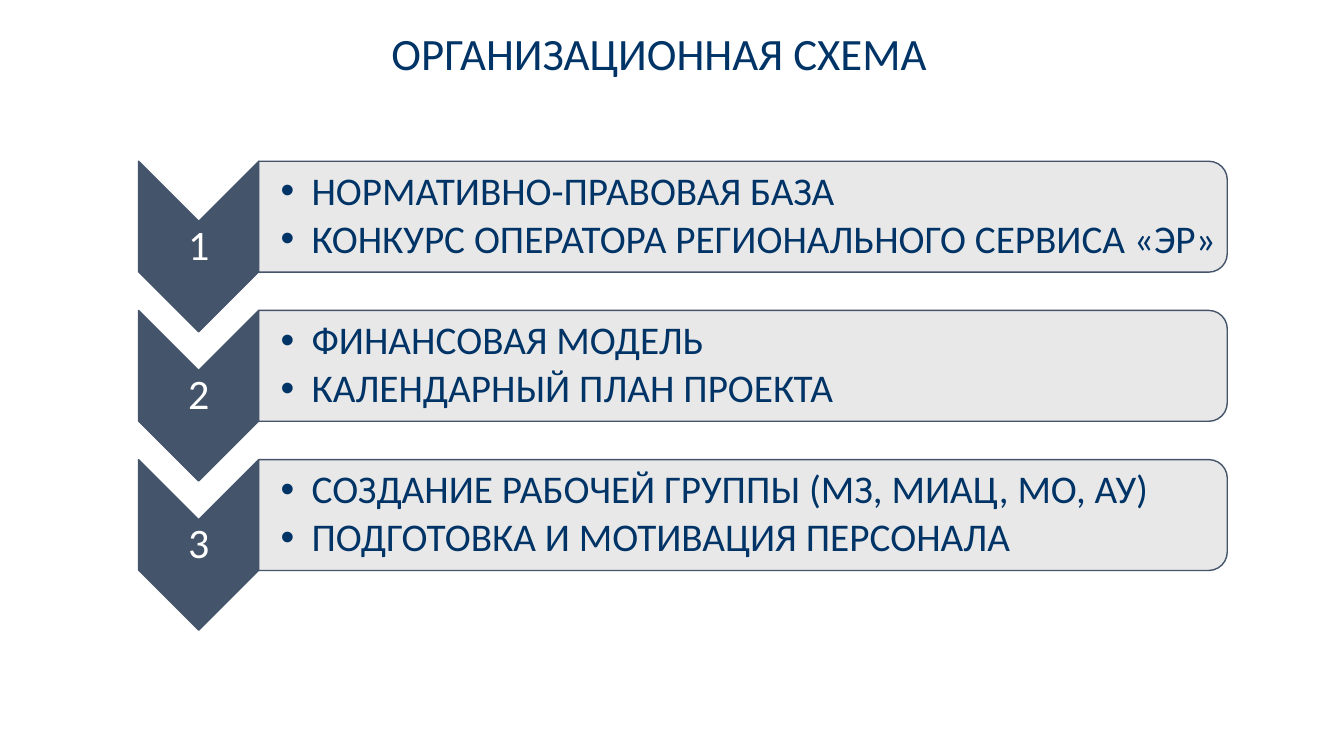
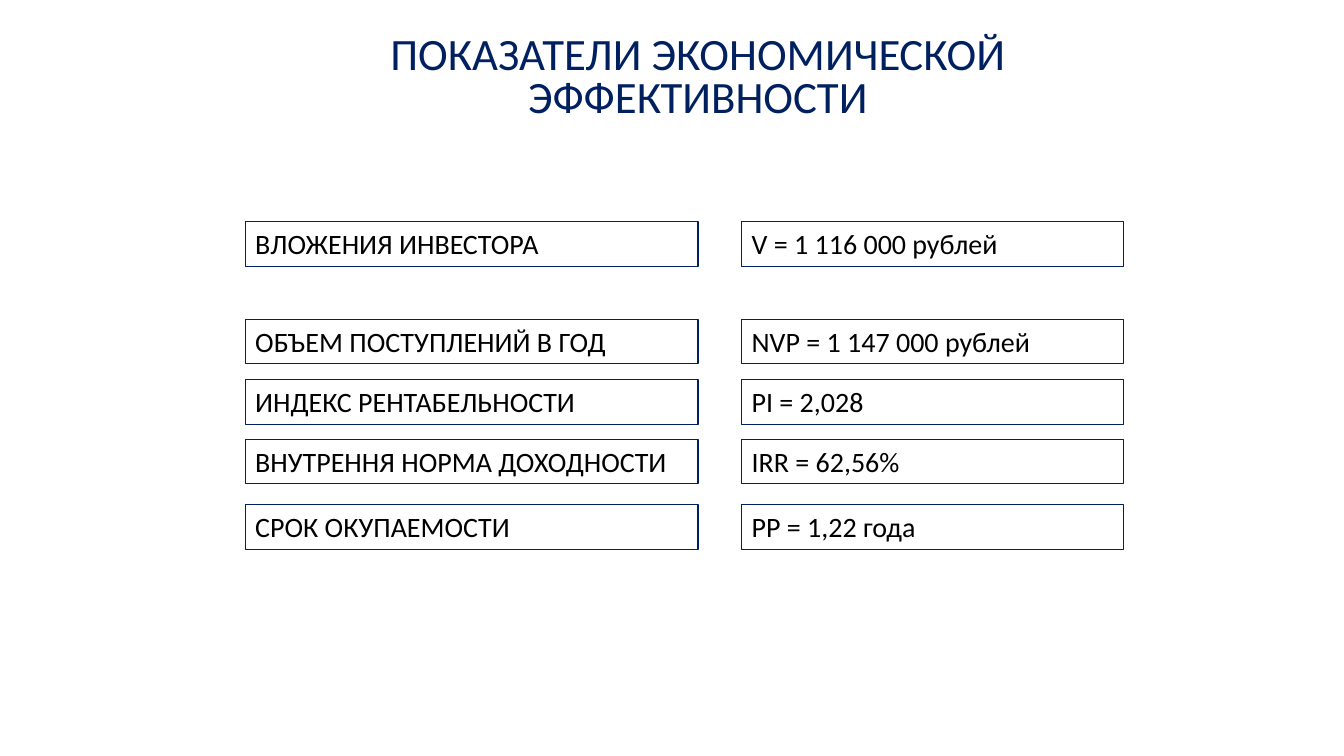
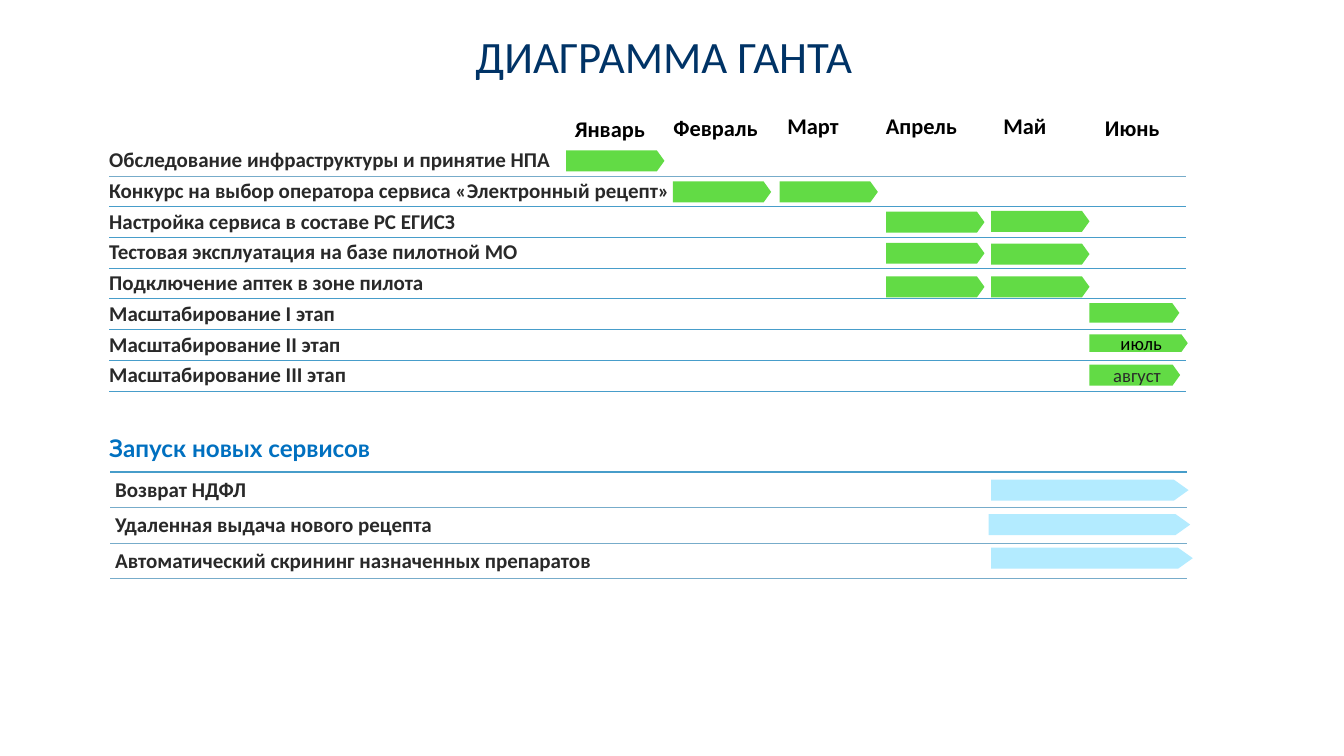
import lxml.etree
import pptx
import pptx.dml.color
import pptx.enum.shapes
import pptx.enum.text
import pptx.oxml.ns
import pptx.util

SHAPE = pptx.enum.shapes.MSO_SHAPE
ALIGN = pptx.enum.text.PP_ALIGN
ANCHOR = pptx.enum.text.MSO_ANCHOR
CELL = pptx.util.Inches(1 / 12)
COLUMNS, ROWS = 160, 90
NAVY, DEEP, SLATE, GREY = "003366", "002060", "44546A", "E7E6E6"
BLUE, AZURE, STEEL, GREEN, ICE = "0070C0", "479DCA", "77ACCA", "62DB45", "B3EBFF"
BLACK, INK, WHITE = "000000", "292929", "FFFFFF"


def units(value):
    return round(value * CELL)


def color(value):
    return pptx.dml.color.RGBColor.from_string(value)


def apply(target, values):
    for name, value in values.items():
        setattr(target, name, value)


def add_xml(parent, tag, **attributes):
    return lxml.etree.SubElement(parent, pptx.oxml.ns.qn(tag), attributes)


class Slides:
    def __init__(self):
        self.deck = pptx.Presentation()
        apply(self.deck, {"slide_width": units(COLUMNS), "slide_height": units(ROWS)})
        self.page = None

    def start(self, title, place, hue=NAVY, align=ALIGN.CENTER, inset=0.6):
        self.page = self.deck.slides.add_slide(self.deck.slide_layouts[6])
        self.text(place, [title], 32, hue, align=align, inset=inset, spacing=0.8)

    def fill_text(self, frame, lines, size, hue, font="Calibri", bold=False, align=ALIGN.LEFT,
                  spacing=1.0, after=0, bullet=False):
        for index, line in enumerate(lines):
            para = frame.add_paragraph() if index else frame.paragraphs[0]
            if bullet:
                props = para._p.get_or_add_pPr()
                props.set("marL", str(units(3.7)))
                props.set("indent", str(-units(3.7)))
                add_xml(props, "a:buFont", typeface="Arial")
                add_xml(props, "a:buChar", char="•")
            apply(para, {"alignment": align, "line_spacing": spacing,
                         "space_after": pptx.util.Pt(after)})
            span = para.add_run()
            span.text = line
            apply(span.font, {"name": font, "size": pptx.util.Pt(size), "bold": bold})
            span.font.color.rgb = color(hue)

    def pad(self, target, inset, left=None):
        margins = dict.fromkeys(("margin_right", "margin_top", "margin_bottom"), units(inset))
        apply(target, {**margins, "margin_left": units(inset if left is None else left)})

    def text(self, place, lines, size, hue, anchor=ANCHOR.TOP, inset=0, left=None, **style):
        box = self.page.shapes.add_textbox(*map(units, place))
        apply(box.text_frame, {"word_wrap": True, "vertical_anchor": anchor})
        self.pad(box.text_frame, inset, left)
        self.fill_text(box.text_frame, lines, size, hue, **style)

    def shape(self, kind, place, fill=None, line=None, width=1, adjust=None):
        shape = self.page.shapes.add_shape(kind, *map(units, place))
        shape.shadow.inherit = False
        if fill:
            shape.fill.solid()
            shape.fill.fore_color.rgb = color(fill)
        else:
            shape.fill.background()
        if line:
            shape.line.color.rgb = color(line)
            shape.line.width = pptx.util.Pt(width)
        else:
            shape.line.fill.background()
        if adjust is not None:
            shape.adjustments[0] = adjust
        return shape

    def turned(self, kind, place, fill, opacity=100):
        left, top, width, height = place
        shift = (width - height) / 2
        shape = self.shape(kind, (left + shift, top - shift, height, width), fill, SLATE)
        shape.rotation = 90
        if opacity < 100:
            hue = shape._element.spPr.find(".//" + pptx.oxml.ns.qn("a:srgbClr"))
            add_xml(hue, "a:alpha", val=str(opacity * 1000))

    def field(self, place, label):
        shape = self.shape(SHAPE.RECTANGLE, place, line=DEEP, width=0.75)
        apply(shape.text_frame, {"word_wrap": True, "vertical_anchor": ANCHOR.TOP})
        self.pad(shape.text_frame, 0.6, 1.2)
        self.fill_text(shape.text_frame, [label], 20, BLACK)

    def bar(self, place, fill, tip, label=None, hue=BLACK):
        shape = self.shape(SHAPE.PENTAGON, place, fill, adjust=tip)
        if label:
            apply(shape.text_frame, {"word_wrap": True, "vertical_anchor": ANCHOR.MIDDLE})
            self.pad(shape.text_frame, 0, 1)
            self.fill_text(shape.text_frame, [label], 13.3, hue, align=ALIGN.CENTER)

    def table(self, place, row_height, labels, rules, inset):
        left, top, width = place
        frame = self.page.shapes.add_table(
            len(labels), 1, *map(units, (left, top, width, row_height * len(labels))))
        apply(frame.table, {"first_row": False, "horz_banding": False})
        for row, label in enumerate(labels):
            frame.table.rows[row].height = units(row_height)
            cell = frame.table.cell(row, 0)
            cell.vertical_anchor = ANCHOR.MIDDLE
            self.pad(cell, inset)
            self.fill_text(cell.text_frame, [label], 15, INK, bold=True)
            self.borders(cell, {"a:lnT": rules[row], "a:lnB": rules[row + 1]})
            cell.fill.background()

    def borders(self, cell, rules):
        props = cell._tc.get_or_add_tcPr()
        for tag in ("a:lnL", "a:lnR", "a:lnT", "a:lnB"):
            rule = rules.get(tag)
            if rule:
                hue, width = rule
                edge = add_xml(props, tag, w=str(int(pptx.util.Pt(width))))
                add_xml(add_xml(edge, "a:solidFill"), "a:srgbClr", val=hue)
            else:
                add_xml(add_xml(props, tag, w="0"), "a:noFill")


def scheme(slides):
    slides.start("ОРГАНИЗАЦИОННАЯ СХЕМА", (20.9, 3.7, 115.2, 6.4))
    steps = [
        ("НОРМАТИВНО-ПРАВОВАЯ БАЗА", "КОНКУРС ОПЕРАТОРА РЕГИОНАЛЬНОГО СЕРВИСА «ЭР»"),
        ("ФИНАНСОВАЯ МОДЕЛЬ", "КАЛЕНДАРНЫЙ ПЛАН ПРОЕКТА"),
        ("СОЗДАНИЕ РАБОЧЕЙ ГРУППЫ (МЗ, МИАЦ, МО, АУ)", "ПОДГОТОВКА И МОТИВАЦИЯ ПЕРСОНАЛА"),
    ]
    for index, lines in enumerate(steps):
        top = 19.2 + 17.76 * index
        chevron = (16.5, top, 14.3, 20.3)
        slides.turned(SHAPE.CHEVRON, chevron, SLATE)
        slides.text(chevron, [str(index + 1)], 30, WHITE, anchor=ANCHOR.MIDDLE, inset=0.2,
                    align=ALIGN.CENTER, spacing=0.9)
        slides.turned(SHAPE.ROUND_2_SAME_RECTANGLE, (30.8, top, 115.3, 13.2), GREY, 90)
        slides.text((30.8, top + 0.6, 114.6, 12), lines, 28, NAVY, anchor=ANCHOR.MIDDLE,
                    inset=0.2, left=2.6, spacing=0.9, after=4, bullet=True)


def indicators(slides):
    slides.start("ПОКАЗАТЕЛИ ЭКОНОМИЧЕСКОЙ ЭФФЕКТИВНОСТИ", (38.4, 3.7, 89.4, 11.5), DEEP)
    rows = [
        (26.4, "ВЛОЖЕНИЯ ИНВЕСТОРА", "V = 1 116 000 рублей"),
        (38, "ОБЪЕМ ПОСТУПЛЕНИЙ В ГОД", "NVP = 1 147 000 рублей"),
        (45.2, "ИНДЕКС РЕНТАБЕЛЬНОСТИ", "PI = 2,028"),
        (52.3, "ВНУТРЕННЯ НОРМА ДОХОДНОСТИ", "IRR = 62,56%"),
        (60.1, "СРОК ОКУПАЕМОСТИ", "PP = 1,22 года"),
    ]
    for top, name, value in rows:
        slides.field((29.2, top, 53.9, 5.3), name)
        slides.field((88.3, top, 45.5, 5.3), value)


def gantt(slides):
    slides.start("ДИАГРАММА ГАНТА", (55.8, 3.8, 73.8, 5.9), align=ALIGN.LEFT, inset=0.8)
    tasks = [
        "Обследование инфраструктуры и принятие НПА",
        "Конкурс на выбор оператора сервиса «Электронный рецепт»",
        "Настройка сервиса в составе РС ЕГИСЗ",
        "Тестовая эксплуатация на базе пилотной МО",
        "Подключение аптек в зоне пилота",
        "Масштабирование I этап",
        "Масштабирование II этап",
        "Масштабирование III этап",
    ]
    services = ["Возврат НДФЛ", "Удаленная выдача нового рецепта",
                "Автоматический скрининг назначенных препаратов"]
    slides.table((13, 17.3, 128.2), 3.66, tasks,
                 [None, (STEEL, 0.75)] + [(AZURE, 0.75)] * 7, 0)
    slides.table((13.1, 56.2, 128.2), 4.24, services,
                 [(AZURE, 2)] + [(STEEL, 0.75)] * 3, 0.6)
    slides.text((13, 51.6, 46.4, 4.2), ["Запуск новых сервисов"], 17.3, BLUE,
                font="Lato", bold=True)

    months = [("Январь", 72.6, 13.7), ("Февраль", 85.2, 13.6), ("Март", 96.8, 13.4),
              ("Апрель", 109.7, 13.4), ("Май", 122, 13.4), ("Июнь", 134.8, 13.6)]
    for name, center, top in months:
        slides.text((center - 6, top, 12, 2.4), [name], 16, BLACK, bold=True, align=ALIGN.CENTER)

    starts = [67.4, 80.1, 92.8, 105.5, 118, 129.7]
    bars = [(0, 17.9), (1, 21.6), (2, 21.6), (3, 25.2), (4, 25.1), (3, 28.9), (4, 29),
            (3, 32.9), (4, 32.9)]
    for month, top in bars:
        slides.bar((starts[month], top, 11.7, 2.5), GREEN, 0.36)
    stages = [(36.1, 10.7, 2.3, None, BLACK), (39.8, 11.7, 2.1, "июль", BLACK),
              (43.4, 10.8, 2.5, "август", INK)]
    for top, width, height, label, hue in stages:
        slides.bar((starts[5], top, width, height), GREEN, 0.36, label, hue)
    for left, top, width in [(118, 57.1, 23.5), (117.7, 61.2, 24), (118, 65.2, 24)]:
        slides.bar((left, top, width, 2.5), ICE, 0.7)


def main():
    slides = Slides()
    for build in (scheme, indicators, gantt):
        build(slides)
    slides.deck.save("out.pptx")


if __name__ == "__main__":
    main()
